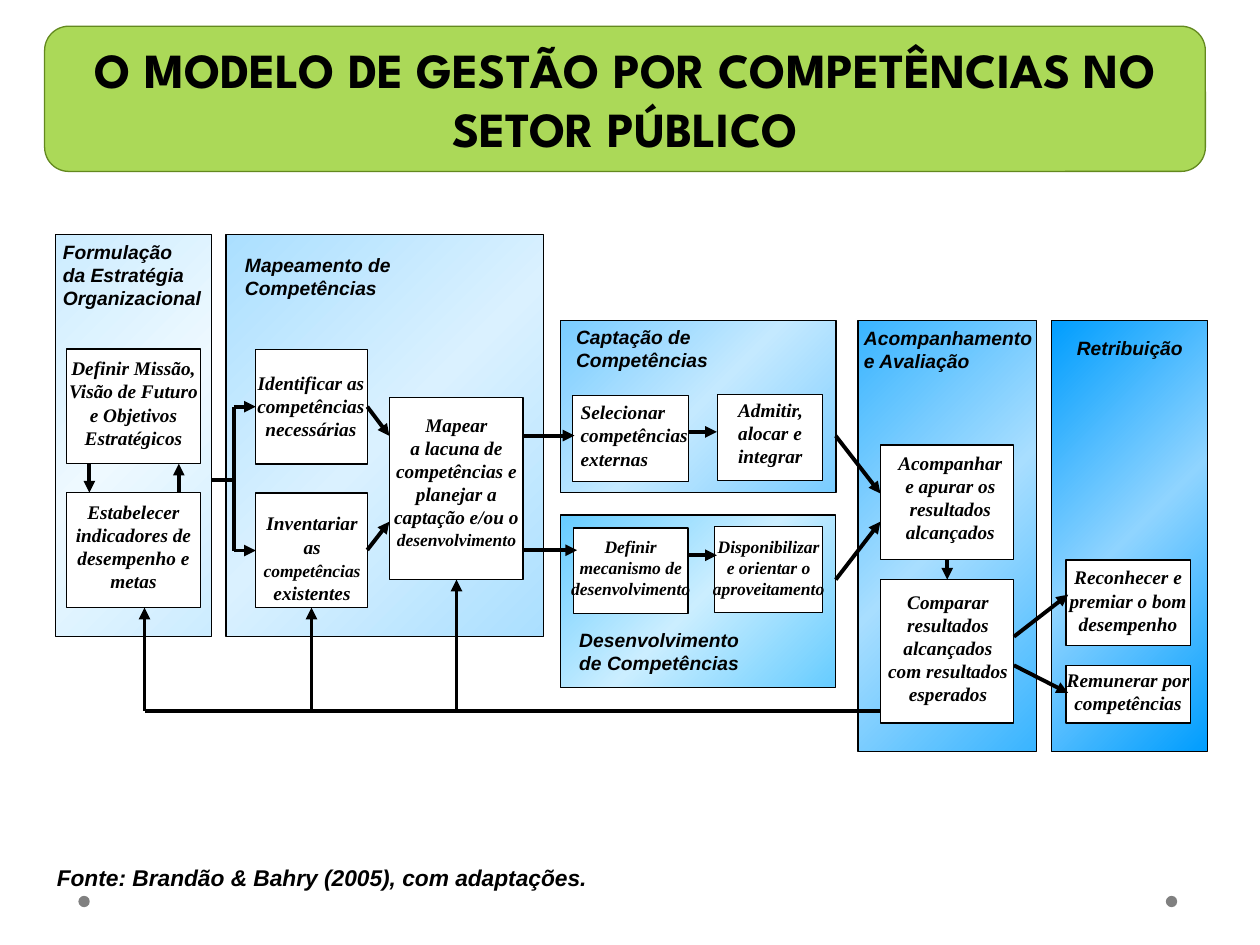
"""Builds a one-slide flow diagram of the competency management model."""
from copy import deepcopy

from lxml import etree
from pptx import Presentation
from pptx import util as u
from pptx.dml.color import RGBColor
from pptx.enum import shapes, text
from pptx.oxml import ns

Pt = u.Pt
LEFT, CENTER = text.PP_ALIGN.LEFT, text.PP_ALIGN.CENTER
RECT = shapes.MSO_SHAPE.RECTANGLE
SERIF, SANS = "Times New Roman", "Arial"
BOLD_ITALIC = {"bold": True, "italic": True}


def rgb(value):
    return RGBColor.from_string(value)


def write(tf, runs, align, font, **style):
    tf.word_wrap = True
    p = tf.paragraphs[0]
    p.alignment = align
    for words, size in runs:
        for i, line in enumerate(words.split("\n")):
            if i:
                p.add_line_break()
            r = p.add_run()
            r.text = line
            for key, value in {"name": font, "size": Pt(size), **style}.items():
                setattr(r.font, key, value)
            r.font.color.rgb = rgb("000000")


prs = Presentation()
prs.slide_width, prs.slide_height = Pt(720), Pt(540)
s = prs.slides.add_slide(prs.slide_layouts[6])

for x in (44.8, 666.2):
    sp = s.shapes.add_shape(shapes.MSO_SHAPE.OVAL, Pt(x), Pt(511.9), Pt(6.5), Pt(6.5))
    sp.shadow.inherit = False
    sp.fill.solid()
    sp.fill.fore_color.rgb = rgb("808080")
    sp.line.fill.background()

panels = [
    (31.7, 133.9, 89.3, 229.7, "CCECFF", "EEF9FF"),
    (129.2, 133.9, 181.4, 229.7, "ABDFFF", "DAF1FF"),
    (320.4, 183.1, 157.4, 98.6, "79CCFF", "C4E9FF"),
    (320.4, 294.3, 157.2, 98.6, "66CCFF", "CBEEFF"),
    (490.3, 183.1, 102.2, 246.2, "39B4FF", "A8DEFF"),
    (600.8, 183.1, 89.3, 246.2, "009DFE", "8FD4FF"),
]
for x, y, w, h, edge, middle in panels:
    sp = s.shapes.add_shape(RECT, Pt(x), Pt(y), Pt(w), Pt(h))
    sp.shadow.inherit = False
    sp.line.color.rgb = rgb("000000")
    sp.line.width = Pt(0.75)
    sp.fill.gradient()
    sp.fill.gradient_angle = 315
    stops = sp._element.spPr.find(ns.qn("a:gradFill")).find(ns.qn("a:gsLst"))
    stops.insert(1, deepcopy(stops[0]))
    for stop, position, color in zip(sp.fill.gradient_stops, (0, 0.5, 1), (edge, middle, edge)):
        stop.position = position
        stop.color.rgb = rgb(color)

boxes = [
    (38.2, 199.4, 76.3, 65.5), (38.2, 281.5, 76.3, 65.5),
    (146.2, 199.6, 64, 65.5), (146.2, 281.7, 64, 65.5),
    (222.6, 227.1, 76.3, 104),
    (327.1, 226, 66.2, 49), (409.9, 225.6, 60, 49),
    (327.7, 301.7, 65.5, 49), (408.5, 301, 61.4, 49),
    (503.1, 254.2, 76.3, 65.5), (503.1, 331.2, 76.3, 82),
    (609.2, 320, 71.3, 49), (609.2, 380.2, 71.3, 33),
]
for x, y, w, h in boxes:
    sp = s.shapes.add_shape(RECT, Pt(x), Pt(y), Pt(w), Pt(h))
    sp.shadow.inherit = False
    sp.fill.solid()
    sp.fill.fore_color.rgb = rgb("FFFFFF")
    sp.line.color.rgb = rgb("000000")
    sp.line.width = Pt(0.75)

links = [
    (51.1, 265, 51.1, 281.5, True), (102.2, 281.5, 102.2, 265, True),
    (121, 274.1, 133.5, 274.1, False), (133.5, 232.4, 133.5, 314.6, False),
    (133.5, 232.4, 146.2, 232.4, True), (133.5, 314.6, 146.2, 314.6, True),
    (209.9, 232.4, 222.5, 249.1, True), (209.9, 314.3, 222.5, 298.1, True),
    (298.8, 248.9, 328.3, 248.9, True), (298.8, 314.4, 329.8, 314.4, True),
    (393.1, 246.8, 409.7, 246.8, True), (393.1, 317.3, 409.7, 317.3, True),
    (477.6, 249.1, 503.1, 282, True), (477.6, 331.2, 503.1, 298.1, True),
    (541.3, 319.7, 541.3, 331.2, True),
    (579.4, 363.8, 610.4, 339.8, True), (579.4, 380.2, 610.4, 396, True),
    (82.6, 406.1, 503.1, 406.1, False), (82.6, 406.1, 82.6, 347.2, True),
    (178, 406.1, 178, 347.2, True), (260.9, 406.1, 260.9, 331.2, True),
]
for x1, y1, x2, y2, arrow in links:
    sp = s.shapes.add_connector(shapes.MSO_CONNECTOR.STRAIGHT, Pt(x1), Pt(y1), Pt(x2), Pt(y2))
    sp.line.color.rgb = rgb("000000")
    sp.line.width = Pt(2.25)
    if arrow:
        etree.SubElement(sp.line._get_or_add_ln(), ns.qn("a:tailEnd"), type="triangle")
    etree.SubElement(sp._element.spPr, ns.qn("a:effectLst"))

labels = [
    (28.8, 133.9, 95, 58, LEFT, SANS, [("Formulação\nda Estratégia\nOrganizacional", 11)]),
    (132.9, 141.1, 140.4, 36, LEFT, SANS, [("Mapeamento de\nCompetências", 11)]),
    (322.1, 182.2, 140, 36, LEFT, SANS, [("Captação de\nCompetências", 11)]),
    (323.9, 355.5, 140.4, 36, LEFT, SANS, [("Desenvolvimento\nde Competências", 11)]),
    (486.6, 182.9, 118, 36, LEFT, SANS, [("Acompanhamento\ne Avaliação", 11)]),
    (608.2, 188.6, 90, 22, LEFT, SANS, [("Retribuição", 11)]),
    (25.4, 489.9, 561.6, 23, LEFT, SANS,
     [("Fonte: Brandão & Bahry (2005), com adaptações.", 13)]),
    (31.7, 200.2, 89.3, 65, CENTER, SERIF,
     [("Definir Missão, Visão de Futuro e Objetivos Estratégicos", 11)]),
    (31.7, 282.2, 89.3, 63, CENTER, SERIF,
     [("Estabelecer indicadores de desempenho e metas", 11)]),
    (138.2, 208.4, 79, 55, CENTER, SERIF, [("Identificar as competências necessárias", 11)]),
    (142, 288.9, 72.7, 55, CENTER, SERIF,
     [("Inventariar as ", 11), ("competências", 10), (" existentes", 11)]),
    (216.2, 232.6, 89.3, 96, CENTER, SERIF,
     [("Mapear\na lacuna de competências e planejar a captação e/ou o ", 11),
      ("desenvolvimento", 10)]),
    (324.7, 225.4, 78, 50, LEFT, SERIF, [("Selecionar competências externas", 11)]),
    (414.7, 223.9, 65, 50, LEFT, SERIF, [("Admitir,\nalocar e\nintegrar", 11)]),
    (314.4, 302.6, 92, 50, CENTER, SERIF, [("Definir\nmecanismo de\ndesenvolvimento", 10)]),
    (397.7, 302.6, 83, 50, CENTER, SERIF,
     [("Disponibilizar\ne orientar o aproveitamento", 10)]),
    (504.9, 254.2, 76.3, 65, CENTER, SERIF,
     [("Acompanhar e apurar os resultados alcançados", 11)]),
    (497.1, 333.6, 89.3, 75, CENTER, SERIF,
     [("Comparar\nresultados alcançados\ncom resultados esperados", 11)]),
    (600, 319.7, 89.3, 48, CENTER, SERIF, [("Reconhecer e premiar o bom desempenho", 11)]),
    (600, 378.5, 89.3, 36, CENTER, SERIF, [("Remunerar por competências", 11)]),
]
for x, y, w, h, align, font, runs in labels:
    sp = s.shapes.add_textbox(Pt(x), Pt(y), Pt(w), Pt(h))
    write(sp.text_frame, runs, align, font, **BOLD_ITALIC)

sp = s.shapes.add_shape(shapes.MSO_SHAPE.ROUNDED_RECTANGLE, Pt(25.5), Pt(15), Pt(663.3), Pt(83))
sp.shadow.inherit = False
sp.fill.solid()
sp.fill.fore_color.rgb = rgb("ABD958")
sp.line.color.rgb = rgb("63891F")
sp.line.width = Pt(0.75)
tf = sp.text_frame
tf.vertical_anchor = text.MSO_ANCHOR.MIDDLE
write(tf, [("O MODELO DE GESTÃO POR COMPETÊNCIAS NO SETOR PÚBLICO", 28)],
      CENTER, "League Spartan", bold=True)

prs.save("out.pptx")
